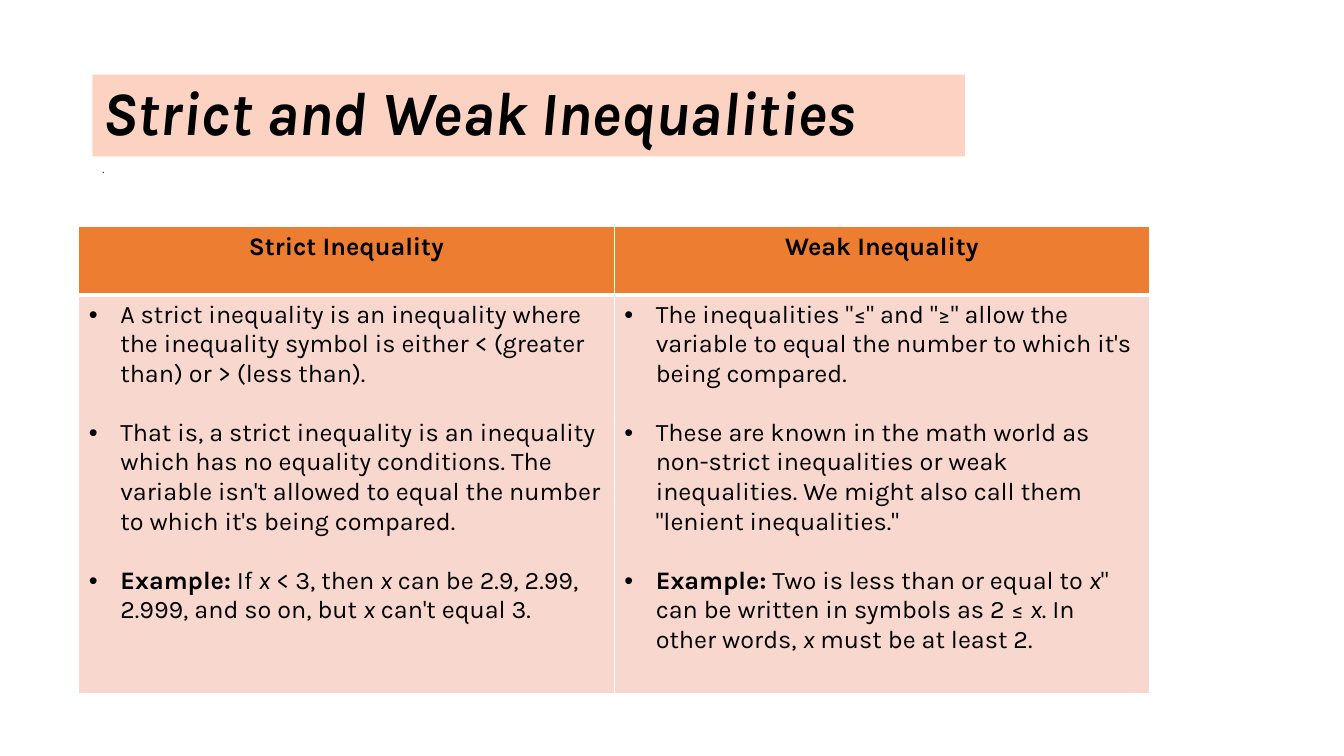
from lxml.etree import SubElement
from pptx import Presentation
from pptx.dml.color import RGBColor
from pptx.enum.text import MSO_ANCHOR, PP_ALIGN
from pptx.oxml.ns import qn
from pptx.util import Pt

PX = 9525
FONT = "Karla"
BLACK = RGBColor(0x00, 0x00, 0x00)
WHITE = RGBColor(0xFF, 0xFF, 0xFF)
PEACH = RGBColor(0xFC, 0xD3, 0xC2)
ORANGE = RGBColor(0xED, 0x7D, 0x31)
BLUSH = RGBColor(0xF8, 0xD7, 0xCE)

HEADER_HEIGHT = 65
BULLET_INDENT = 30
INEQUALITIES = {
    "Strict Inequality": [
        ("", "A strict inequality is an inequality where the inequality symbol is either < (greater than) or > (less than)."),
        ("", "That is, a strict inequality is an inequality which has no equality conditions. The variable isn't allowed to equal the number to which it's being compared."),
        ("Example:", " If *x* < 3, then *x* can be 2.9, 2.99, 2.999, and so on, but *x* can't equal 3."),
    ],
    "Weak Inequality": [
        ("", "The inequalities \"≤\" and \"≥\" allow the variable to equal the number to which it's being compared."),
        ("", "These are known in the math world as non-strict inequalities or weak inequalities. We might also call them \"lenient inequalities.\""),
        ("Example:", " Two is less than or equal to *x*\" can be written in symbols as 2 ≤ *x*. In other words, *x* must be at least 2."),
    ],
}


def emu(*lengths):
    return [length * PX for length in lengths]


def style_run(run, size, bold=False, italic=False):
    run.font.name = FONT
    run.font.size = Pt(size)
    run.font.bold = bold
    run.font.italic = italic
    run.font.color.rgb = BLACK


def add_line(slide, box, text, size, emphasis=False):
    line_box = slide.shapes.add_textbox(*emu(*box))
    frame = line_box.text_frame
    frame.word_wrap = True
    frame.text = text
    style_run(frame.paragraphs[0].runs[0], size, emphasis, emphasis)
    return line_box


def add_title(slide, box):
    title = add_line(slide, box, "Strict and Weak Inequalities", 44, True)
    title.fill.solid()
    title.fill.fore_color.rgb = PEACH
    title.text_frame.vertical_anchor = MSO_ANCHOR.MIDDLE
    title.text_frame.paragraphs[0].line_spacing = 0.9


def style_cell(cell, fill, bottom_width):
    properties = cell._tc.get_or_add_tcPr()
    for side, width in (("L", 1), ("R", 1), ("T", 1), ("B", bottom_width)):
        border = SubElement(properties, qn(f"a:ln{side}"), w=str(Pt(width)))
        solid = SubElement(border, qn("a:solidFill"))
        SubElement(solid, qn("a:srgbClr"), val=str(WHITE))
    cell.fill.solid()
    cell.fill.fore_color.rgb = fill


def write_point(paragraph, lead, statement):
    properties = paragraph._p.get_or_add_pPr()
    properties.set("marL", str(BULLET_INDENT * PX))
    properties.set("indent", str(-BULLET_INDENT * PX))
    SubElement(properties, qn("a:buFont"), typeface="Arial")
    SubElement(properties, qn("a:buChar"), char="•")
    if lead:
        lead_run = paragraph.add_run()
        lead_run.text = lead
        style_run(lead_run, 18, bold=True)
    for position, part in enumerate(statement.split("*")):
        part_run = paragraph.add_run()
        part_run.text = part
        style_run(part_run, 18, italic=position % 2 == 1)


def add_comparison(slide, box):
    left, top, width, height = box
    table = slide.shapes.add_table(2, len(INEQUALITIES), *emu(*box)).table
    table.first_row = False
    table.horz_banding = False
    table.rows[0].height, table.rows[1].height = emu(HEADER_HEIGHT, height - HEADER_HEIGHT)
    for column, (heading, points) in enumerate(INEQUALITIES.items()):
        header, body = table.cell(0, column), table.cell(1, column)
        style_cell(header, ORANGE, 3)
        style_cell(body, BLUSH, 1)
        header.text_frame.text = heading
        heading_line = header.text_frame.paragraphs[0]
        heading_line.alignment = PP_ALIGN.CENTER
        style_run(heading_line.runs[0], 18, bold=True)
        for index, (lead, statement) in enumerate(points):
            if index == 0:
                paragraph = body.text_frame.paragraphs[0]
            else:
                paragraph = body.text_frame.add_paragraph()
                paragraph.space_before = Pt(21)
            write_point(paragraph, lead, statement)


def main():
    presentation = Presentation()
    presentation.slide_width, presentation.slide_height = emu(1280, 720)
    slide = presentation.slides.add_slide(presentation.slide_layouts[6])
    add_title(slide, (88, 71, 831, 78))
    add_line(slide, (88, 150, 1104, 499), ".", 8)
    add_comparison(slide, (75, 216, 1020, 445))
    presentation.save("out.pptx")


if __name__ == "__main__":
    main()
